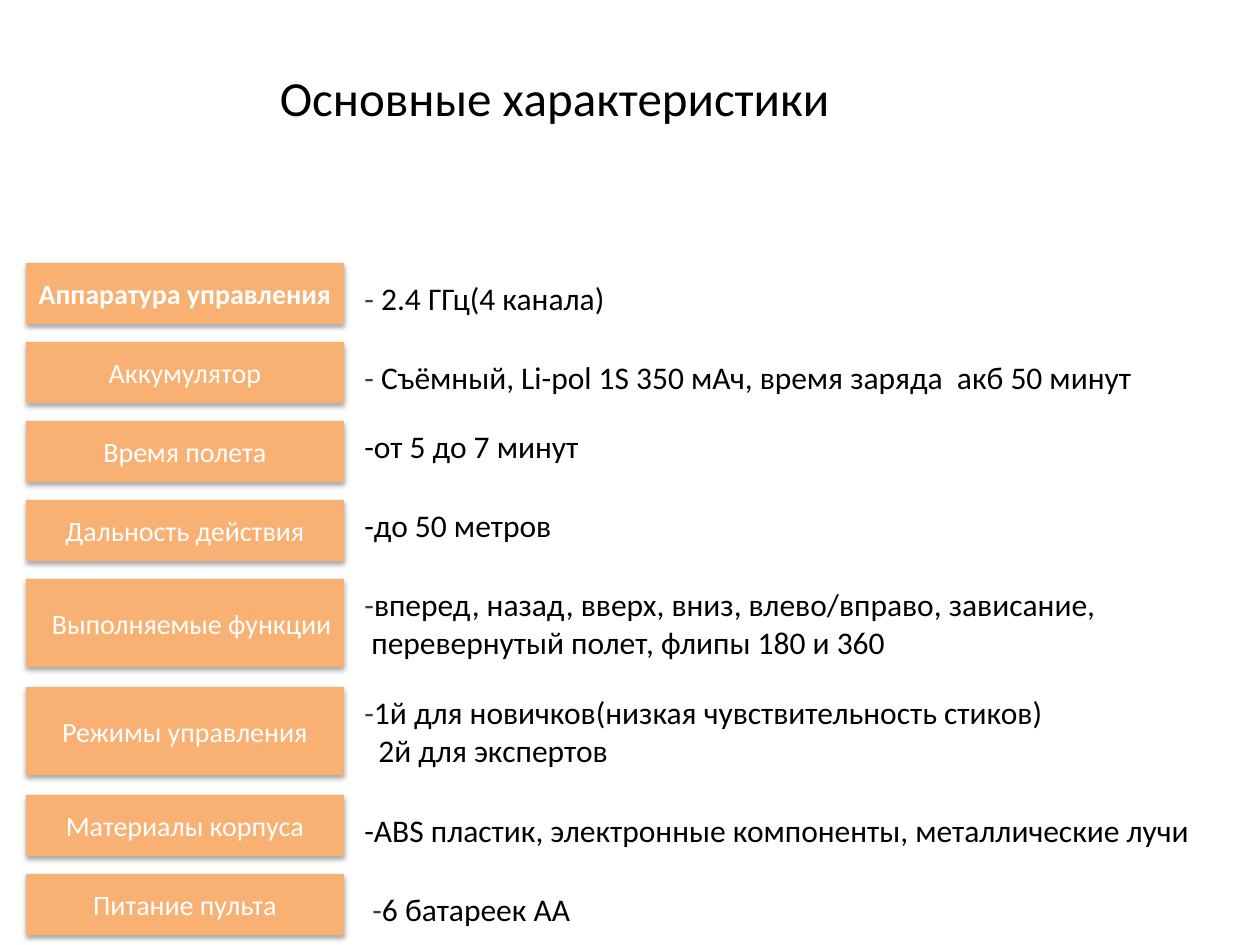
from lxml import etree
from pptx import Presentation
from pptx.dml.color import RGBColor
from pptx.enum.shapes import MSO_SHAPE
from pptx.enum.text import MSO_ANCHOR, PP_ALIGN
from pptx.oxml.ns import qn
from pptx.util import Emu, Pt

RECT = MSO_SHAPE.RECTANGLE
MIDDLE = MSO_ANCHOR.MIDDLE
LEFT, CENTER, RIGHT = PP_ALIGN.LEFT, PP_ALIGN.CENTER, PP_ALIGN.RIGHT

FONT = "Calibri"
ORANGE, WHITE, BLACK, GREY = "F9B073", "FFFFFF", "000000", "404040"

LABEL_X, LABEL_W, VALUE_X, FIRST_Y = 26, 318, 352, 263
# Lines in a value: label height, distance to the next row
ROW_SIZES = {1: (61, 79), 2: (88, 108)}

# label, label format, value lines, dash colour, value box (dx, dy, w, h), second line indent
ROWS = [
    ("Аппаратура управления", {"bold": True}, ["- 2.4 ГГц(4 канала)"],
     GREY, (0, 10, 276, 50), 0),
    ("Аккумулятор", {}, ["- Съёмный, Li-pol 1S 350 мАч, время заряда  акб 50 минут"],
     GREY, (0, 10, 857, 89), 0),
    ("Время полета", {}, ["-от 5 до 7 минут"], BLACK, (0, 0, 242, 50), 0),
    ("Дальность действия", {}, ["-до 50 метров"], BLACK, (0, 0, 214, 50), 0),
    ("Выполняемые функции", {"align": RIGHT},
     ["-вперед, назад, вверх, вниз, влево/вправо, зависание,",
      "перевернутый полет, флипы 180 и 360"], GREY, (0, 0, 788, 89), 7),
    ("Режимы управления", {},
     ["-1й для новичков(низкая чувствительность стиков)",
      "2й для экспертов"], GREY, (0, 0, 719, 89), 14),
    ("Материалы корпуса", {}, ["-ABS пластик, электронные компоненты, металлические лучи"],
     BLACK, (0, 10, 859, 50), 0),
    ("Питание пульта", {}, ["-6 батареек АА"], GREY, (8, 10, 226, 50), 0),
]


def px(n):
    return Emu(round(n * 914400 / 126))


def rgb(color):
    return RGBColor.from_string(color)


def add_text(p, text, size=18, color=BLACK, bold=False, align=LEFT):
    """Append a formatted run to a paragraph."""
    p.alignment = align
    r = p.add_run()
    r.text = text
    r.font.name = FONT
    r.font.size = Pt(size)
    r.font.bold = bold
    r.font.color.rgb = rgb(color)


def add_shadow(sp):
    """Give a shape a soft shadow straight below it."""
    sp.shadow.inherit = False
    effects = sp._element.spPr.find(qn("a:effectLst"))
    shadow = etree.SubElement(effects, qn("a:outerShdw"), blurRad=str(Pt(3.1)),
                              dist=str(Pt(1.8)), dir="5400000", rotWithShape="0")
    color = etree.SubElement(shadow, qn("a:srgbClr"), val=BLACK)
    etree.SubElement(color, qn("a:alpha"), val="35000")


def add_title(slide, text):
    sp = slide.shapes.title
    sp.left, sp.top, sp.width, sp.height = px(266), px(29), px(577), px(136)
    sp.text_frame.vertical_anchor = MIDDLE
    add_text(sp.text_frame.paragraphs[0], text, size=28, align=CENTER)


def add_label(slide, text, y, h, bold=False, align=CENTER):
    sp = slide.shapes.add_shape(RECT, px(LABEL_X), px(y), px(LABEL_W), px(h))
    sp.fill.solid()
    sp.fill.fore_color.rgb = rgb(ORANGE)
    sp.line.fill.background()
    add_shadow(sp)
    tf = sp.text_frame
    tf.word_wrap = True
    tf.vertical_anchor = MIDDLE
    add_text(tf.paragraphs[0], text, size=16, color=WHITE, bold=bold, align=align)


def add_value(slide, lines, x, y, w, h, dash_color, indent):
    tf = slide.shapes.add_textbox(px(x), px(y), px(w), px(h)).text_frame
    tf.word_wrap = True
    p = tf.paragraphs[0]
    add_text(p, lines[0][:1], color=dash_color)
    add_text(p, lines[0][1:])
    for line in lines[1:]:
        p = tf.add_paragraph()
        p._p.get_or_add_pPr().set("marL", str(px(indent)))
        add_text(p, line)


def main():
    prs = Presentation()
    prs.slide_width, prs.slide_height = px(1260), px(945)
    slide = prs.slides.add_slide(prs.slide_layouts[5])
    add_title(slide, "Основные характеристики")
    y = FIRST_Y
    for label, style, lines, dash_color, (dx, dy, w, h), indent in ROWS:
        label_h, pitch = ROW_SIZES[len(lines)]
        add_label(slide, label, y, label_h, **style)
        add_value(slide, lines, VALUE_X + dx, y + dy, w, h, dash_color, indent)
        y += pitch
    prs.save("out.pptx")


if __name__ == "__main__":
    main()
